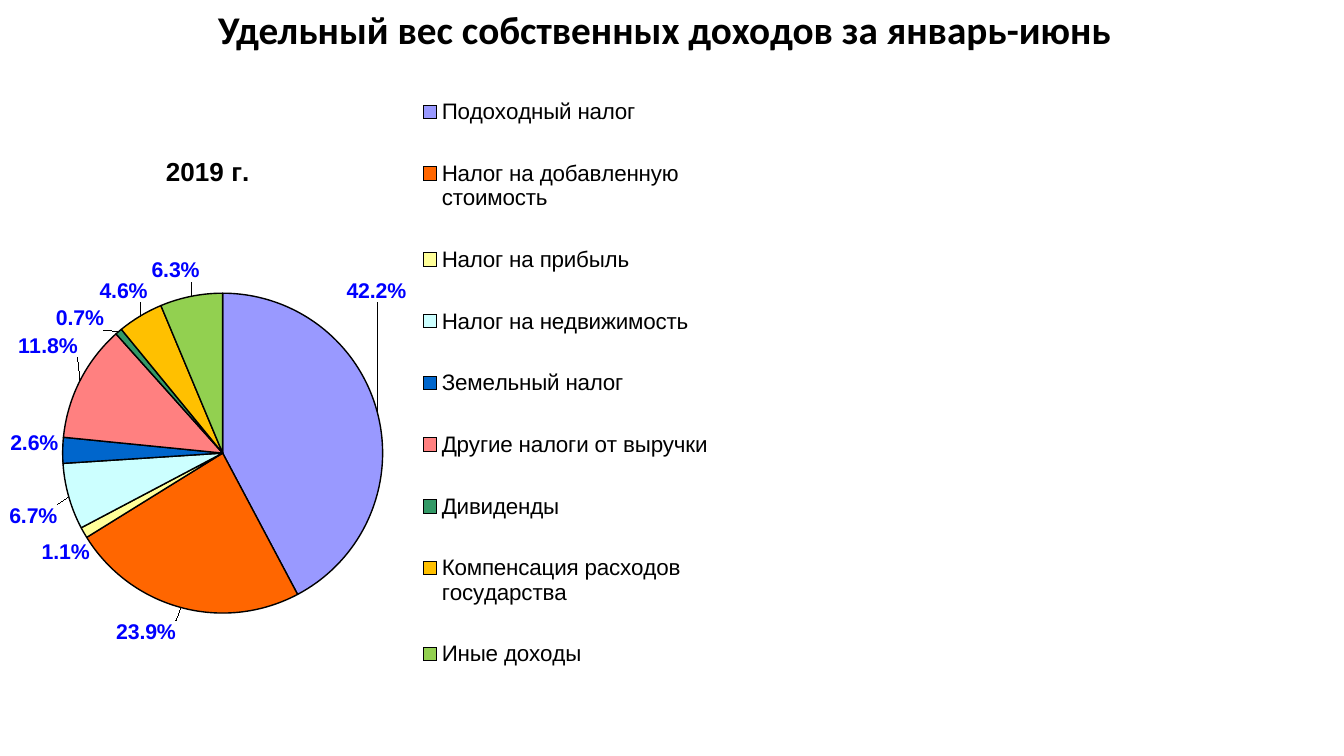
from lxml import etree
from pptx import Presentation
from pptx.chart.data import CategoryChartData
from pptx.dml.color import RGBColor
from pptx.enum.chart import XL_CHART_TYPE, XL_LABEL_POSITION, XL_LEGEND_POSITION
from pptx.enum.text import MSO_ANCHOR, MSO_AUTO_SIZE, PP_ALIGN
from pptx.oxml.ns import qn
from pptx.util import Inches, Pt

PIE = XL_CHART_TYPE.PIE
OUTSIDE = XL_LABEL_POSITION.OUTSIDE_END
LEGEND_RIGHT = XL_LEGEND_POSITION.RIGHT
CENTER = PP_ALIGN.CENTER
TOP = MSO_ANCHOR.TOP
NO_AUTOFIT = MSO_AUTO_SIZE.NONE
SLIDE_WIDTH, SLIDE_HEIGHT = Inches(13.33), Inches(7.5)
PERCENT_FORMAT = "0.0%"
LABEL_FONT = {"size": 15.2, "fill": "0000FF", "bold": True}

# Name, share, fill, label shift in percent of the chart's width and height
INCOME = [
    ("Подоходный налог", 42.2, "9999FF", (-5.1, -14.4)),
    ("Налог на добавленную стоимость", 23.9, "FF6600", (-0.5, 1)),
    ("Налог на прибыль", 1.1, "FFFF99", (1.5, 0.6)),
    ("Налог на недвижимость", 6.7, "CCFFFF", (-0.8, 0.8)),
    ("Земельный налог", 2.6, "0066CC", (0.2, -0.9)),
    ("Другие налоги от выручки", 11.8, "FF8080", (0.4, -2.6)),
    ("Дивиденды", 0.7, "339966", (-1.5, 0.4)),
    ("Компенсация расходов государства", 4.6, "FFC000", (1.4, -1.1)),
    ("Иные доходы", 6.3, "92D050", (1.3, -1.1)),
]


def color(hex_string):
    return RGBColor.from_string(hex_string)


def format_font(font, size, name="Arial", fill="000000", bold=False):
    font.size = Pt(size)
    font.name = name
    font.bold = bold
    font.color.rgb = color(fill)


def write_text(text_frame, text, align=None, **font_format):
    paragraph = text_frame.paragraphs[0]
    if align is not None:
        paragraph.alignment = align
    run = paragraph.add_run()
    run.text = text
    format_font(run.font, **font_format)


def add_value(parent, tag, value):
    etree.SubElement(parent, qn(tag)).set("val", str(value))


def place(element, after=None, inner=False, edge=True, **percents):
    """Give a chart element a manual layout in percent of the chart's size."""
    for old in element.findall(qn("c:layout")):
        element.remove(old)
    layout = etree.Element(qn("c:layout"))
    manual = etree.SubElement(layout, qn("c:manualLayout"))
    if inner:
        add_value(manual, "c:layoutTarget", "inner")
    if edge:
        add_value(manual, "c:xMode", "edge")
        add_value(manual, "c:yMode", "edge")
    for key, percent in percents.items():
        add_value(manual, "c:" + key, round(percent / 100, 4))
    if after is None:
        element.insert(0, layout)
    else:
        element.find(qn(after)).addnext(layout)
    return layout


def find_part(chart, tag):
    return chart.element.find(".//" + qn(tag))


def add_title(slide, text):
    title = slide.shapes.title
    title.left, title.top = Inches(2.06), 0
    title.width, title.height = Inches(9.06), Inches(0.57)
    frame = title.text_frame
    frame.word_wrap = True
    frame.auto_size = NO_AUTOFIT
    frame.vertical_anchor = TOP
    write_text(frame, text, align=CENTER, size=28, name="Calibri", bold=True)


def format_labels(labels):
    labels.show_value = False
    labels.show_percentage = True
    labels.number_format = PERCENT_FORMAT
    labels.number_format_is_linked = False
    labels.position = OUTSIDE
    format_font(labels.font, **LABEL_FONT)


def format_slice(point, fill):
    point.format.fill.solid()
    point.format.fill.fore_color.rgb = color(fill)
    point.format.line.color.rgb = color("000000")
    point.format.line.width = Pt(1)
    format_font(point.data_label.font, **LABEL_FONT)
    point.data_label.position = OUTSIDE


def shift_label(label, x, y):
    """Move one label and make it show its percentage."""
    layout = place(label, after="c:idx", edge=False, x=x, y=y)
    number_format = etree.Element(qn("c:numFmt"))
    number_format.set("formatCode", PERCENT_FORMAT)
    number_format.set("sourceLinked", "0")
    layout.addnext(number_format)
    label.find(qn("c:showVal")).set("val", "0")
    label.find(qn("c:showPercent")).set("val", "1")


def add_income_pie(slide):
    data = CategoryChartData()
    data.categories = [name for name, *_ in INCOME]
    data.add_series("Series 1", [share for _, share, *_ in INCOME])
    chart = slide.shapes.add_chart(
        PIE, 0, 0, Inches(7.23), Inches(7.64), data).chart
    format_font(chart.font, 15.5)

    # Title and legend
    chart.has_title = True
    chart.chart_title.include_in_layout = False
    write_text(chart.chart_title.text_frame, "2019 г.", size=18.6, bold=True)
    place(find_part(chart, "c:title"), after="c:tx", x=22.1, y=19.4)
    chart.has_legend = True
    chart.legend.position = LEGEND_RIGHT
    chart.legend.include_in_layout = False
    format_font(chart.legend.font, 16)
    place(find_part(chart, "c:legend"), after="c:legendPos",
          x=56.6, y=8.1, w=42, h=83.3)

    # Plot, slices and labels
    place(find_part(chart, "c:plotArea"), inner=True,
          x=8.6, y=20.8, w=43.9, h=76.1)
    chart.plots[0].vary_by_categories = True
    series = chart.plots[0].series[0]
    format_labels(series.data_labels)
    for index, (_, _, fill, _) in enumerate(INCOME):
        format_slice(series.points[index], fill)
    labels = chart.element.iter(qn("c:dLbl"))
    for label, (*_, shift) in zip(list(labels), INCOME):
        shift_label(label, *shift)
    for leader in chart.element.iter(qn("c:showLeaderLines")):
        leader.set("val", "1")


def main():
    presentation = Presentation()
    presentation.slide_width = SLIDE_WIDTH
    presentation.slide_height = SLIDE_HEIGHT
    slide = presentation.slides.add_slide(presentation.slide_layouts[5])
    add_income_pie(slide)
    add_title(slide, "Удельный вес собственных доходов за январь-июнь")
    presentation.save("out.pptx")


if __name__ == "__main__":
    main()
